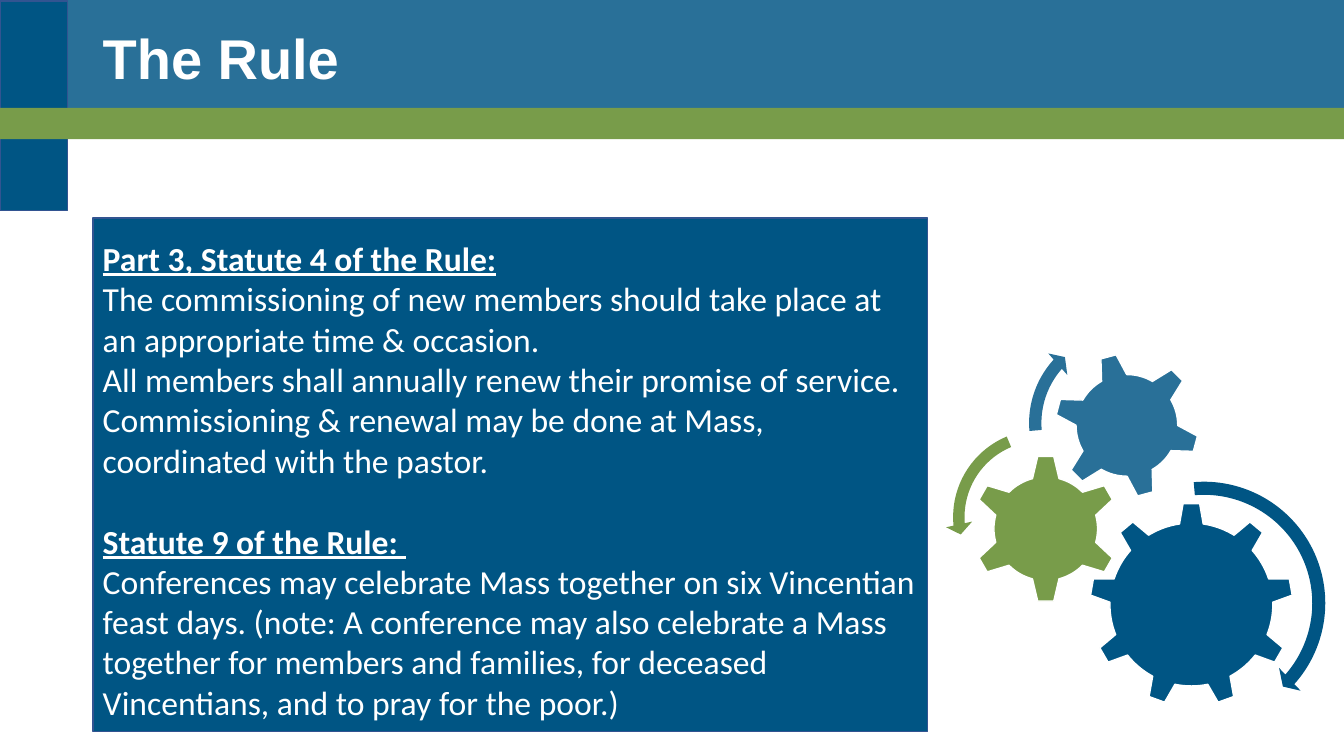
from pptx import Presentation
from pptx.dml.color import RGBColor
from pptx.enum.shapes import MSO_SHAPE as Preset
from pptx.enum.text import MSO_ANCHOR
from pptx.util import Cm, Pt

NAVY = RGBColor(0x00, 0x55, 0x84)
TEAL = RGBColor(0x29, 0x70, 0x98)
GREEN = RGBColor(0x78, 0x9C, 0x4A)
OUTLINE = RGBColor(0x32, 0x54, 0x91)
WHITE = RGBColor(0xFF, 0xFF, 0xFF)

WIDTH, HEIGHT = 33.87, 19.05
LEFT, PANEL_WIDTH = 2.34, 21.03

TITLE = "The Rule"
STATUTES = [
    ("Part 3, Statute 4 of the Rule:", [
        "The commissioning of new members should take place at an appropriate time & occasion.",
        "All members shall annually renew their promise of service.",
        "Commissioning & renewal may be done at Mass, coordinated with the pastor.",
    ]),
    ("Statute 9 of the Rule: ", [
        "Conferences may celebrate Mass together on six Vincentian feast days. "
        "(note: A conference may also celebrate a Mass together for members and families, "
        "for deceased Vincentians, and to pray for the poor.)",
    ]),
]

# left, top, width, height in cm, fill, outline
BLOCKS = [
    (0, 0, WIDTH, 2.87, TEAL, None),
    (0, 0.03, 1.7, 5.28, NAVY, OUTLINE),
    (0, 2.72, WIDTH, 0.79, GREEN, None),
    (LEFT, 5.49, PANEL_WIDTH, 12.95, NAVY, OUTLINE),
]
# preset, left, top, size in cm, fill, rotation
GEARS = [
    (Preset.GEAR_9, 27.46, 12.67, 5.13, NAVY, 0),
    (Preset.GEAR_6, 24.49, 11.46, 3.73, GREEN, 0),
    (Preset.GEAR_6, 26.57, 8.89, 3.66, TEAL, 345),
]
# preset, left, top, size in cm, fill, adjustments
ARROWS = [
    (Preset.CIRCULAR_ARROW, 27.05, 11.91, 6.58, NAVY, (0.05, 2.99, 24.93, 159.13, 0.06)),
    (Preset.LEFT_CIRCULAR_ARROW, 23.83, 10.64, 4.78, GREEN, (0.06, 4.3, 104.89, 148.38, 0.07)),
    (Preset.CIRCULAR_ARROW, 25.73, 8.08, 5.16, TEAL, (0.06, 3.94, 133.14, 105.08, 0.07)),
]


def add_shape(slide, preset, left, top, width, height, fill, outline=None):
    shape = slide.shapes.add_shape(preset, Cm(left), Cm(top), Cm(width), Cm(height))
    shape.shadow.inherit = False
    shape.fill.solid()
    shape.fill.fore_color.rgb = fill
    if outline is None:
        shape.line.fill.background()
    else:
        shape.line.color.rgb = outline
        shape.line.width = Pt(1)
    return shape


def add_text_box(slide, left, top, width, height):
    frame = slide.shapes.add_textbox(Cm(left), Cm(top), Cm(width), Cm(height)).text_frame
    frame.word_wrap = True
    frame.vertical_anchor = MSO_ANCHOR.TOP
    return frame


def write(paragraph, text, *, size, font, bold=False, underline=False, before=0, spacing=1.0):
    paragraph.space_before = Pt(before)
    paragraph.line_spacing = spacing
    run = paragraph.add_run()
    run.text = text
    run.font.size = Pt(size)
    run.font.name = font
    run.font.bold = bold
    run.font.underline = underline
    run.font.color.rgb = WHITE


def add_statutes(slide):
    frame = add_text_box(slide, LEFT, 5.87, PANEL_WIDTH, 13.0)
    paragraph = frame.paragraphs[0]
    for number, (heading, sentences) in enumerate(STATUTES):
        if number:
            paragraph = frame.add_paragraph()
        write(paragraph, heading, size=24, font="Calibri", bold=True, underline=True,
              before=29 if number else 0)
        for sentence in sentences:
            write(frame.add_paragraph(), sentence, size=24, font="Calibri")


def main():
    presentation = Presentation()
    presentation.slide_width, presentation.slide_height = Cm(WIDTH), Cm(HEIGHT)
    slide = presentation.slides.add_slide(presentation.slide_layouts[6])

    for block in BLOCKS:
        add_shape(slide, Preset.RECTANGLE, *block)
    title = add_text_box(slide, LEFT, 0.65, 29.21, 2.26)
    write(title.paragraphs[0], TITLE, size=40, font="Arial", bold=True, spacing=0.9)

    for preset, left, top, size, fill, rotation in GEARS:
        gear = add_shape(slide, preset, left, top, size, size, fill, WHITE)
        gear.rotation = rotation
    for preset, left, top, size, fill, adjustments in ARROWS:
        arrow = add_shape(slide, preset, left, top, size, size, fill)
        for index, value in enumerate(adjustments):
            arrow.adjustments[index] = value

    add_statutes(slide)
    presentation.save("out.pptx")


if __name__ == "__main__":
    main()
